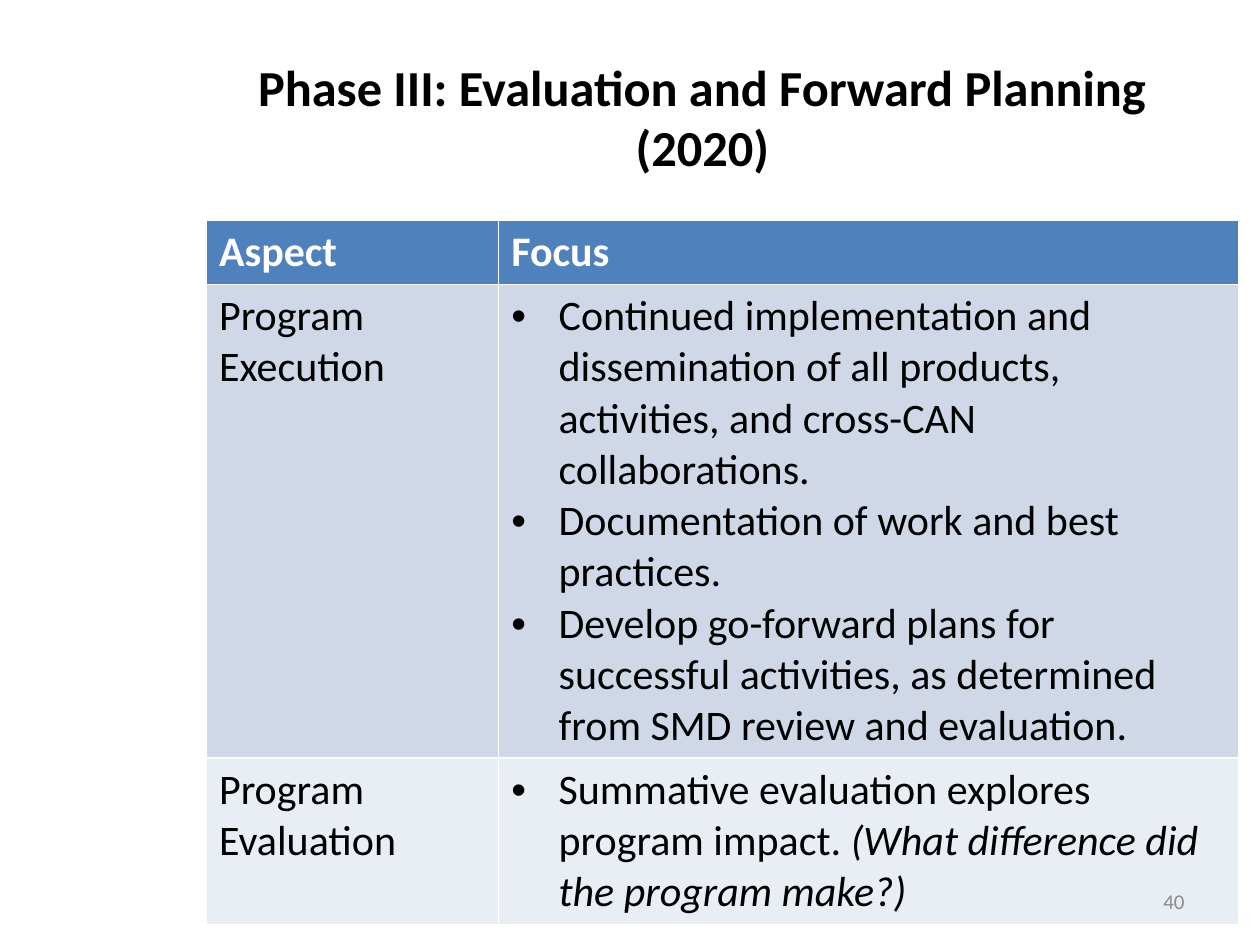
from lxml import etree
from pptx import Presentation
from pptx.dml.color import RGBColor
from pptx.enum.text import MSO_ANCHOR, PP_ALIGN
from pptx.oxml.ns import qn
from pptx.util import Pt

CENTER, RIGHT = PP_ALIGN.CENTER, PP_ALIGN.RIGHT
MIDDLE = MSO_ANCHOR.MIDDLE
TITLE_ONLY = 5
FONT = "Calibri"
BLACK, WHITE, GREY = "000000", "FFFFFF", "8C8C8C"
HEADER_FILL = "4F81BD"
BAND_FILLS = ["D0D8E8", "E9EDF4"]
BULLET_INDENT = Pt(27)

HEADINGS = ["Aspect", "Focus"]
# Each focus item is a list of (text, italic) pieces
PROGRAM = [
    ("Program Execution", [
        [("Continued implementation and dissemination of all products, "
          "activities, and cross-CAN collaborations.", False)],
        [("Documentation of work and best practices.", False)],
        [("Develop go-forward plans for successful activities, as determined "
          "from SMD review and evaluation.", False)],
    ]),
    ("Program Evaluation", [
        [("Summative evaluation explores program impact. ", False),
         ("(What difference did the program make?)", True)],
    ]),
]
COLUMN_WIDTHS = [167, 422.6]
ROW_HEIGHTS = [36, 270.7, 95]


def rgb(value):
    return RGBColor.from_string(value)


def style_font(font, size, color, bold=False, italic=False):
    font.name = FONT
    font.size = Pt(size)
    font.color.rgb = rgb(color)
    font.bold = bold
    font.italic = italic


def add_bullet(paragraph):
    properties = paragraph._p.get_or_add_pPr()
    properties.set("marL", str(BULLET_INDENT))
    properties.set("indent", str(-BULLET_INDENT))
    etree.SubElement(properties, qn("a:buFont")).set("typeface", "Arial")
    etree.SubElement(properties, qn("a:buChar")).set("char", "•")


def fill_cell(cell, color):
    cell.fill.solid()
    cell.fill.fore_color.rgb = rgb(color)


def write_label(cell, text, color, bold=False):
    cell.text = text
    style_font(cell.text_frame.paragraphs[0].runs[0].font, 24, color, bold)


def write_bullets(cell, items):
    frame = cell.text_frame
    for index, pieces in enumerate(items):
        paragraph = frame.add_paragraph() if index else frame.paragraphs[0]
        add_bullet(paragraph)
        for text, italic in pieces:
            run = paragraph.add_run()
            run.text = text
            style_font(run.font, 24, BLACK, italic=italic)


def add_title(slide):
    title = slide.shapes.title
    title.left, title.top = Pt(118.8), Pt(21.6)
    title.width, title.height = Pt(565.2), Pt(90)
    frame = title.text_frame
    frame.vertical_anchor = MIDDLE
    frame.text = "Phase III: Evaluation and Forward Planning\v(2020)"
    heading = frame.paragraphs[0]
    heading.alignment = CENTER
    for run in heading.runs:
        style_font(run.font, 28.8, BLACK, bold=True)


def add_program_table(slide):
    table = slide.shapes.add_table(
        len(ROW_HEIGHTS), len(COLUMN_WIDTHS), Pt(118), Pt(126),
        Pt(sum(COLUMN_WIDTHS)), Pt(sum(ROW_HEIGHTS))).table
    for column, width in zip(table.columns, COLUMN_WIDTHS):
        column.width = Pt(width)
    for row, height in zip(table.rows, ROW_HEIGHTS):
        row.height = Pt(height)

    # Header row
    for cell, heading in zip(table.rows[0].cells, HEADINGS):
        fill_cell(cell, HEADER_FILL)
        write_label(cell, heading, WHITE, bold=True)

    # Aspect rows
    for index, (aspect, focus) in enumerate(PROGRAM):
        aspect_cell, focus_cell = table.rows[index + 1].cells
        for cell in (aspect_cell, focus_cell):
            fill_cell(cell, BAND_FILLS[index])
        write_label(aspect_cell, aspect, BLACK)
        write_bullets(focus_cell, focus)


def add_page_number(slide, number):
    page_box = slide.shapes.add_textbox(Pt(516.2), Pt(500.4), Pt(167.8), Pt(28.8))
    frame = page_box.text_frame
    frame.word_wrap = True
    frame.vertical_anchor = MIDDLE
    frame.text = number
    frame.paragraphs[0].alignment = RIGHT
    style_font(frame.paragraphs[0].runs[0].font, 12, GREY)


def main():
    deck = Presentation()
    deck.slide_width, deck.slide_height = Pt(720), Pt(540)
    slide = deck.slides.add_slide(deck.slide_layouts[TITLE_ONLY])
    add_title(slide)
    add_program_table(slide)
    add_page_number(slide, "40")
    deck.save("out.pptx")


if __name__ == "__main__":
    main()
